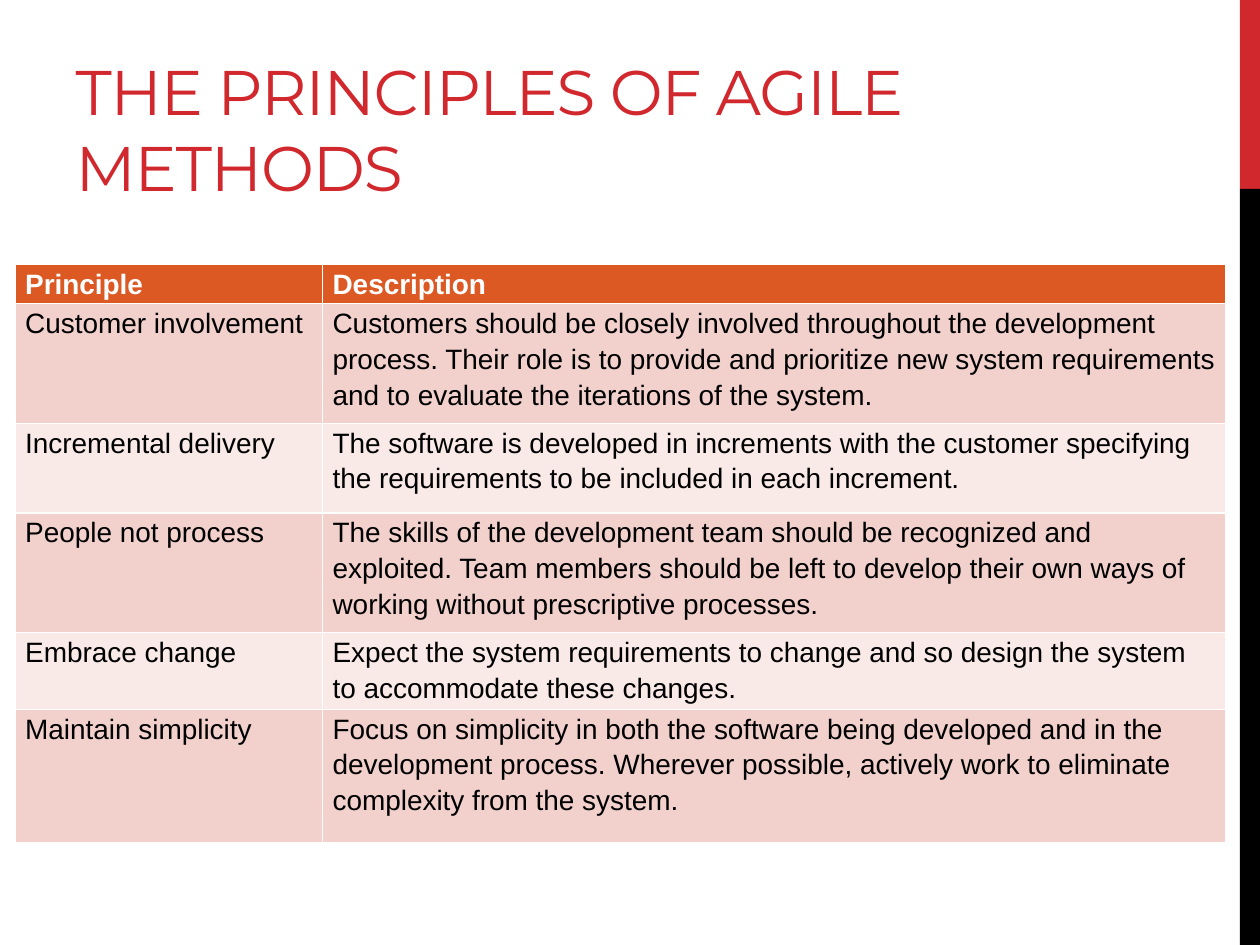
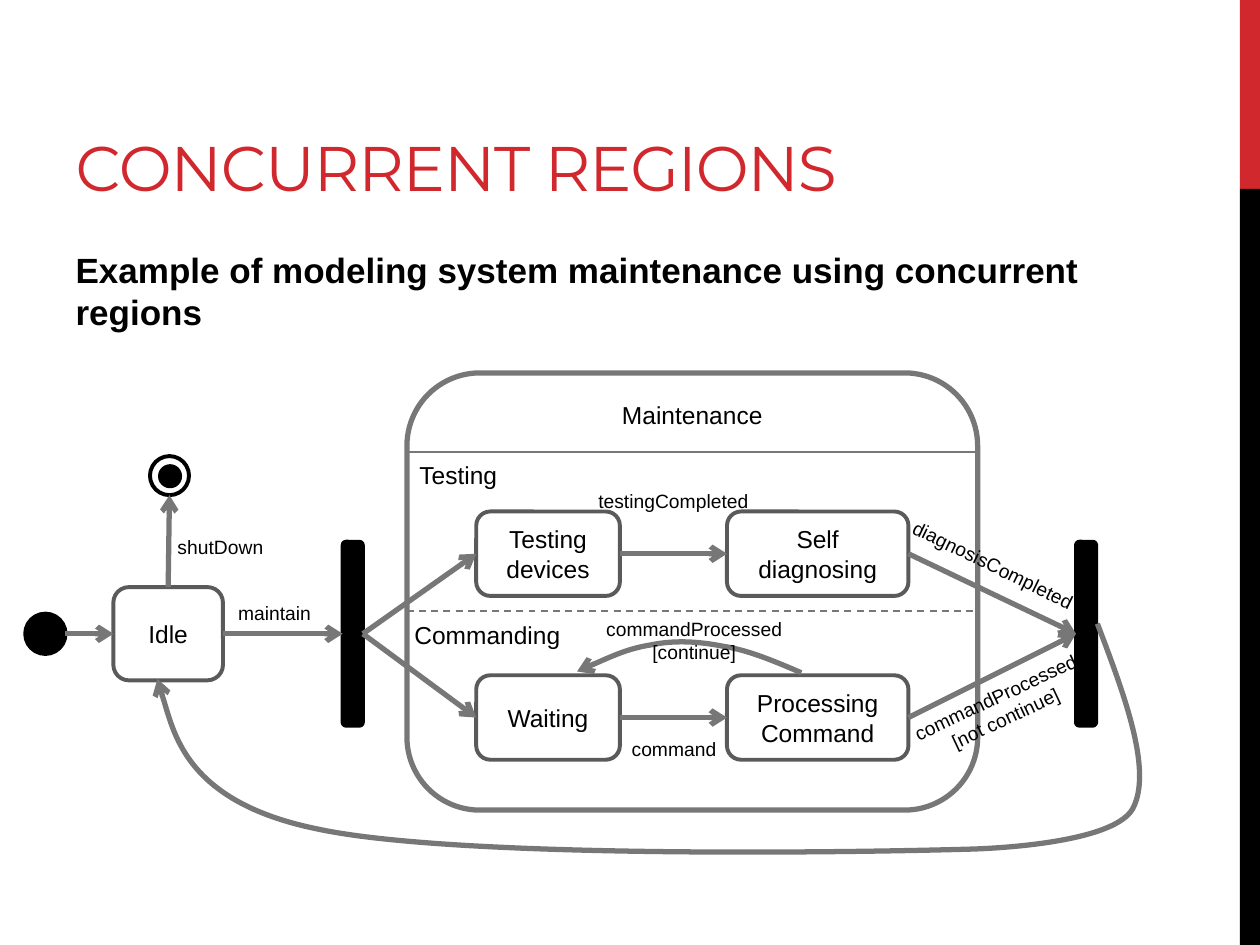
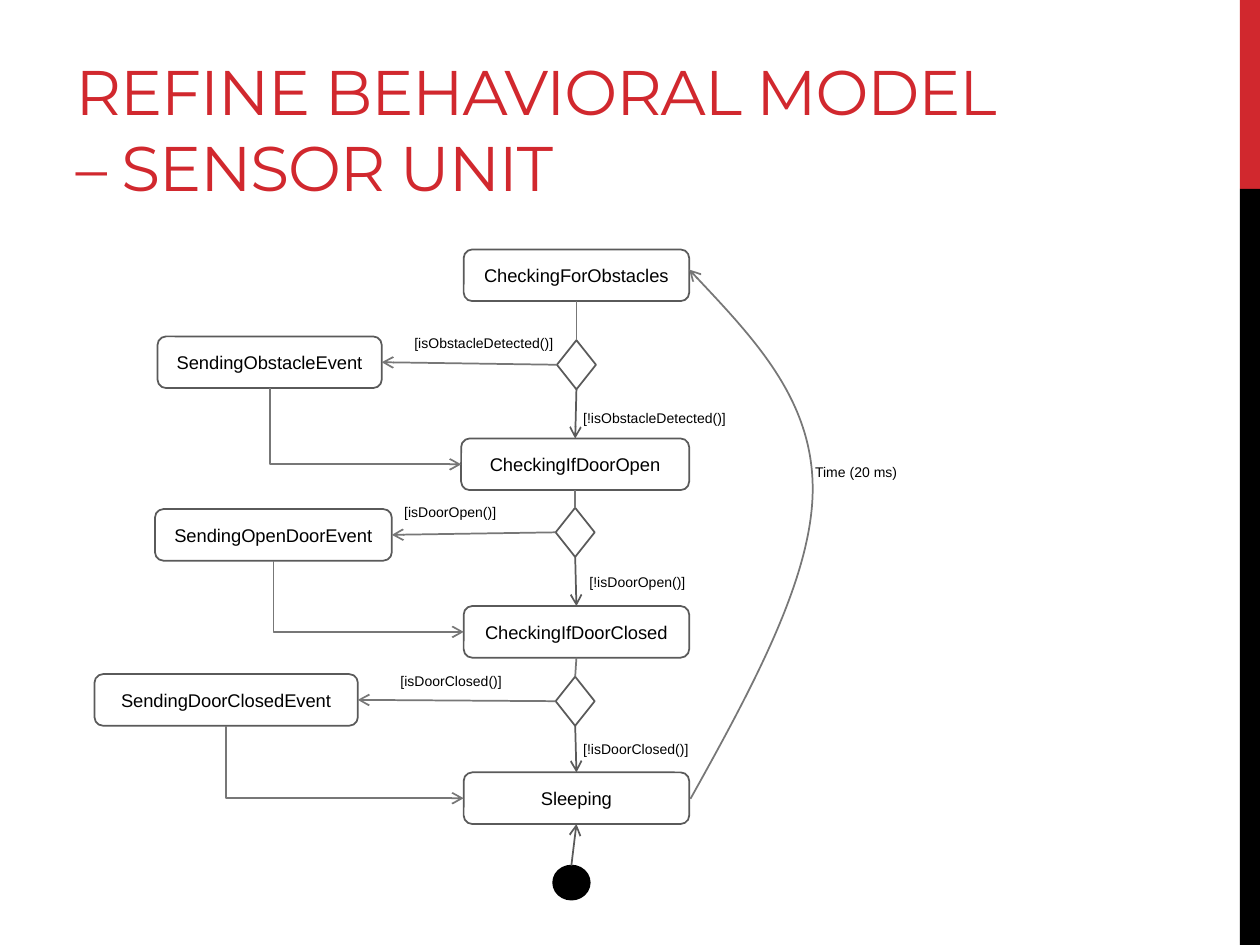
import dataclasses
import enum
import itertools
import typing

import lxml.etree
import pptx
import pptx.dml.color
import pptx.enum.dml
import pptx.enum.shapes
import pptx.enum.text
import pptx.oxml.ns
import pptx.presentation
import pptx.shapes.autoshape
import pptx.shapes.base
import pptx.shapes.connector
import pptx.slide
import pptx.text.text
import pptx.util

Kind = pptx.enum.shapes.MSO_SHAPE
Wire = pptx.enum.shapes.MSO_CONNECTOR
Align = pptx.enum.text.PP_ALIGN
Anchor = pptx.enum.text.MSO_ANCHOR
Fit = pptx.enum.text.MSO_AUTO_SIZE
Node = pptx.shapes.autoshape.Shape
Page = pptx.slide.Slide
qn = pptx.oxml.ns.qn

COLS, ROWS = 100, 75
CELL = pptx.util.Inches(0.1)


@dataclasses.dataclass(frozen=True)
class Theme:
    red: str = "D1282E"
    black: str = "000000"
    white: str = "FFFFFF"
    dark: str = "5A5A5A"
    gray: str = "777777"
    orange: str = "DC5924"
    rose: str = "F2D1CD"
    blush: str = "F9EAE8"
    head: str = "Montserrat"
    text: str = "Arial"
    title: float = 36
    lead: float = 20
    table: float = 16
    state: float = 14
    event: float = 11
    small: float = 10.5
    guard: float = 8


THEME = Theme()


class Side(enum.IntEnum):
    TOP = 0
    LEFT = 1
    FOOT = 2
    RIGHT = 3


class Box(typing.NamedTuple):
    x: float
    y: float
    w: float
    h: float


class Pen(typing.NamedTuple):
    ink: str
    width: float
    tip: bool = False
    dash: bool = False


class Label(typing.NamedTuple):
    text: str
    box: Box
    size: float
    align: Align = Align.CENTER
    turn: float = 0


class Choice(typing.NamedTuple):
    gem: Box
    event: str
    place: Box
    yes: Label
    no: Label


Point = tuple[float, float]

TITLE = Box(5, 1.7, 75.8, 15)
BANDS = [(Box(98.4, 0, 1.6, 15), THEME.red), (Box(98.4, 15, 1.6, 60), THEME.black)]

HEAVY = Pen(THEME.gray, 3, tip=True)
FRAME = Pen(THEME.gray, 3)
BOLD = Pen(THEME.dark, 2.25)
SOLID = Pen(THEME.black, 2.25)
THIN = Pen(THEME.gray, 1)
FINE = Pen(THEME.dark, 1)

TABLE = Box(1.2, 21, 96.1, 45.8)
WIDTHS = [24.4, 71.7]
HEIGHTS = [3.1, 9.5, 7.1, 9.5, 6.1, 10.6]
RULES = [
    ("Principle", "Description"),
    ("Customer involvement", "Customers should be closely involved throughout the development process. Their role is to provide and prioritize new system requirements and to evaluate the iterations of the system."),
    ("Incremental delivery", "The software is developed in increments with the customer specifying the requirements to be included in each increment."),
    ("People not process", "The skills of the development team should be recognized and exploited. Team members should be left to develop their own ways of working without prescriptive processes."),
    ("Embrace change", "Expect the system requirements to change and so design the system to accommodate these changes."),
    ("Maintain simplicity", "Focus on simplicity in both the software being developed and in the development process. Wherever possible, actively work to eliminate complexity from the system."),
]

LABELS = [
    Label("Testing", Box(32.3, 36, 10.2, 3.4), THEME.state, Align.LEFT),
    Label("Commanding", Box(31.9, 48.7, 13.7, 3.4), THEME.state, Align.LEFT),
    Label("command", Box(47.5, 58, 12, 2.9), THEME.event),
    Label("commandProcessed\n[continue]", Box(42.9, 48.5, 24.4, 4.7), THEME.event),
    Label("commandProcessed\n[not continue]", Box(67.2, 53.8, 24.4, 4.7), THEME.event, turn=334.8),
    Label("maintain", Box(16.1, 47.2, 11.4, 2.9), THEME.event),
    Label("diagnosisCompleted", Box(66.6, 43.4, 24.4, 2.9), THEME.event, turn=25.9),
    Label("testingCompleted", Box(45.9, 38.3, 15.1, 2.9), THEME.event),
    Label("shutDown", Box(11.8, 42, 11.4, 2.9), THEME.event),
]
REPEAT = [(63.6, 53.4), (61.5, 52.5), (59.4, 51.6), (57.4, 51.3), (55.4, 50.9),
          (53.5, 50.8), (51.6, 51.2), (49.7, 51.5), (45.8, 53.3), (45.8, 53.3)]
RETURN = [(87.1, 49.5), (89.3, 55.3), (91.5, 61.2), (89.9, 64.2), (88.2, 67.2),
          (76.9, 67.4), (76.9, 67.4), (66.2, 67.7), (35.9, 68.1), (25.2, 65.8),
          (14.4, 63.6), (12.5, 53.9), (12.5, 53.9)]

CHECKS = [
    ("CheckingForObstacles", Box(36.8, 19.8, 17.9, 4.1)),
    ("CheckingIfDoorOpen", Box(36.6, 34.8, 18.1, 4.1)),
    ("CheckingIfDoorClosed", Box(36.8, 48.1, 17.9, 4.1)),
    ("Sleeping", Box(36.8, 61.3, 17.9, 4.1)),
]


def guard(text: str, x: float, y: float, w: float = 13.9) -> Label:
    return Label(text, Box(x, y, w, 2.4), THEME.guard, Align.LEFT)


CHOICES = [
    Choice(Box(44.2, 27, 3.1, 3.9), "SendingObstacleEvent", Box(12.5, 26.7, 17.8, 4.1),
           guard("[isObstacleDetected()]", 31.9, 26.1),
           guard("[!isObstacleDetected()]", 45.3, 32)),
    Choice(Box(44.1, 40.3, 3.1, 3.9), "SendingOpenDoorEvent", Box(12.3, 40.4, 18.8, 4.1),
           guard("[isDoorOpen()]", 31.1, 39.5, 10.6),
           guard("[!isDoorOpen()]", 45.8, 45)),
    Choice(Box(44.1, 53.7, 3.1, 3.9), "SendingDoorClosedEvent", Box(7.5, 53.5, 20.9, 4.1),
           guard("[isDoorClosed()]", 30.8, 52.9, 10.6),
           guard("[!isDoorClosed()]", 45.3, 58.3)),
]
TIMER = [(54.8, 63.4), (59.7, 54.6), (64.5, 45.8), (64.5, 38.8),
         (64.5, 31.8), (59.6, 26.6), (54.7, 21.4)]


def span(cells: float) -> pptx.util.Length:
    return pptx.util.Emu(round(cells * CELL))


def spans(cells: typing.Iterable[float]) -> list[pptx.util.Length]:
    return [span(cell) for cell in cells]


def tint(ink: str) -> pptx.dml.color.RGBColor:
    return pptx.dml.color.RGBColor.from_string(ink)


def move(shape: pptx.shapes.base.BaseShape, box: Box) -> None:
    shape.left, shape.top, shape.width, shape.height = spans(box)


def style(frame: pptx.text.text.TextFrame, size: float, ink: str = THEME.black,
          align: Align = Align.LEFT, face: str = THEME.text, bold: bool = False) -> None:
    for para in frame.paragraphs:
        para.alignment = align
        for run in para.runs:
            run.font.size = pptx.util.Pt(size)
            run.font.name = face
            run.font.bold = bold
            run.font.color.rgb = tint(ink)


def stroke(shape: pptx.shapes.base.BaseShape, pen: Pen) -> None:
    shape.line.color.rgb = tint(pen.ink)
    shape.line.width = pptx.util.Pt(pen.width)
    if pen.dash:
        shape.line.dash_style = pptx.enum.dml.MSO_LINE.DASH
    if pen.tip:
        line = shape.element.find(".//" + qn("a:ln"))
        lxml.etree.SubElement(line, qn("a:tailEnd"), type="arrow")


def draw(page: Page, kind: Kind, box: Box, pen: Pen, fill: str = "", text: str = "",
         size: float = THEME.state, anchor: Anchor = Anchor.MIDDLE) -> Node:
    shape = page.shapes.add_shape(kind, *spans(box))
    shape.shadow.inherit = False
    if fill:
        shape.fill.solid()
        shape.fill.fore_color.rgb = tint(fill)
    else:
        shape.fill.background()
    stroke(shape, pen)
    if text:
        frame = shape.text_frame
        frame.text = text
        frame.word_wrap = True
        frame.vertical_anchor = anchor
        style(frame, size, align=Align.CENTER)
    return shape


def write(page: Page, label: Label) -> None:
    shape = page.shapes.add_textbox(*spans(label.box))
    shape.rotation = label.turn
    frame = shape.text_frame
    frame.text = label.text
    frame.word_wrap = True
    frame.auto_size = Fit.SHAPE_TO_FIT_TEXT
    style(frame, label.size, align=label.align)


def site(shape: Node, side: Side) -> tuple[int, int]:
    across = {Side.LEFT: 0, Side.RIGHT: 1}.get(side, 0.5)
    down = {Side.TOP: 0, Side.FOOT: 1}.get(side, 0.5)
    return (round(shape.left + across * shape.width),
            round(shape.top + down * shape.height))


def line(page: Page, start: tuple[int, int], end: tuple[int, int], pen: Pen,
         kind: Wire = Wire.STRAIGHT) -> pptx.shapes.connector.Connector:
    wire = page.shapes.add_connector(kind, *start, *end)
    stroke(wire, pen)
    lxml.etree.SubElement(wire.element.find(qn("p:spPr")), qn("a:effectLst"))
    return wire


def link(page: Page, source: Node, out: Side, target: Node, into: Side, pen: Pen,
         kind: Wire = Wire.STRAIGHT) -> pptx.shapes.connector.Connector:
    wire = line(page, site(source, out), site(target, into), pen, kind)
    if source.auto_shape_type != Kind.OVAL:
        wire.begin_connect(source, out)
    if target.auto_shape_type != Kind.OVAL:
        wire.end_connect(target, into)
    return wire


def bend(page: Page, source: Node, target: Node, pen: Pen) -> None:
    wire = link(page, source, Side.FOOT, target, Side.LEFT, pen, Wire.ELBOW)
    x, y = site(source, Side.FOOT)
    right, foot = site(target, Side.LEFT)
    wide, high = right - x, foot - y
    wire.left = pptx.util.Emu(x + (wide - high) // 2)
    wire.top = pptx.util.Emu(y + (high - wide) // 2)
    wire.width, wire.height = pptx.util.Emu(high), pptx.util.Emu(wide)
    frame = wire.element.find(".//" + qn("a:xfrm"))
    frame.set("rot", "16200000")
    frame.set("flipH", "1")
    wire.element.find(".//" + qn("a:prstGeom")).set("prst", "bentConnector2")


def curve(page: Page, points: list[Point], pen: Pen) -> None:
    first, *rest = [tuple(spans(point)) for point in points]
    form = page.shapes.build_freeform(*first)
    form.add_line_segments(rest, close=False)
    shape = form.convert_to_shape()
    shape.shadow.inherit = False
    shape.fill.background()
    stroke(shape, pen)
    track = shape.element.find(".//" + qn("a:path"))
    parts = track.findall(qn("a:lnTo"))
    for start in range(0, len(parts), 3):
        arc = lxml.etree.SubElement(track, qn("a:cubicBezTo"))
        for part in parts[start:start + 3]:
            arc.append(part[0])
            track.remove(part)


def begin(deck: pptx.presentation.Presentation, title: str, layout: int = 5) -> Page:
    page = deck.slides.add_slide(deck.slide_layouts[layout])
    shape = page.shapes.title
    move(shape, TITLE)
    frame = shape.text_frame
    frame.text = title
    frame.word_wrap = True
    frame.auto_size = Fit.NONE
    frame.vertical_anchor = Anchor.BOTTOM
    style(frame, THEME.title, THEME.red, face=THEME.head)
    for run in frame.paragraphs[0].runs:
        run.font.element.set("spc", "-60") if hasattr(run.font, "element") else \
            shape.element.find(".//" + qn("a:rPr")).set("spc", "-60")
    return page


def trim(deck: pptx.presentation.Presentation) -> None:
    tree = deck.slide_master.shapes.element
    for index, (box, ink) in enumerate(BANDS, 1):
        band = draw(deck.slides[0], Kind.RECTANGLE, box, THIN, ink)
        band.line.fill.background()
        band.name = f"Band {index}"
        band.element.find(".//" + qn("p:cNvPr")).set("id", str(100 + index))
        tree.append(band.element)


def edge(cell: lxml.etree._Element) -> None:
    for place, side in enumerate("LRTB"):
        rule = lxml.etree.Element(qn(f"a:ln{side}"), w=str(pptx.util.Pt(1)))
        fill = lxml.etree.SubElement(rule, qn("a:solidFill"))
        lxml.etree.SubElement(fill, qn("a:srgbClr"), val=THEME.white)
        cell.insert(place, rule)


def agile(deck: pptx.presentation.Presentation) -> None:
    page = begin(deck, "THE PRINCIPLES OF AGILE METHODS")
    frame = page.shapes.add_table(len(RULES), len(WIDTHS), *spans(TABLE))
    table = frame.table
    for column, width in zip(table.columns, WIDTHS):
        column.width = span(width)
    for index, (row, height, texts) in enumerate(zip(table.rows, HEIGHTS, RULES)):
        row.height = span(height)
        top = index == 0
        fill = THEME.orange if top else (THEME.blush, THEME.rose)[index % 2]
        for cell, text in zip(row.cells, texts):
            cell.margin_left = cell.margin_right = span(0.8)
            cell.margin_top = cell.margin_bottom = 0
            cell.fill.solid()
            cell.fill.fore_color.rgb = tint(fill)
            cell.text_frame.text = text
            cell.text_frame.paragraphs[0].line_spacing = 1.15
            style(cell.text_frame, THEME.table, THEME.white if top else THEME.black, bold=top)
    for cell in frame.element.iter(qn("a:tcPr")):
        edge(cell)


def regions(deck: pptx.presentation.Presentation) -> None:
    page = begin(deck, "CONCURRENT REGIONS", 1)
    body = page.placeholders[1]
    move(body, Box(5, 19.2, 83.3, 8.9))
    frame = body.text_frame
    frame.text = "Example of modeling system maintenance using concurrent regions"
    frame.auto_size = Fit.NONE
    para = frame.paragraphs[0]
    props = body.element.find(".//" + qn("a:p")).get_or_add_pPr()
    props.set("marL", "0")
    props.set("indent", "0")
    lxml.etree.SubElement(props, qn("a:buNone"))
    para.space_before, para.space_after = pptx.util.Pt(0), pptx.util.Pt(6)
    style(frame, THEME.lead, bold=True)

    def state(text: str, x: float, y: float, w: float, h: float = 6.7) -> Node:
        return draw(page, Kind.ROUNDED_RECTANGLE, Box(x, y, w, h), BOLD, text=text)

    whole = Box(32.3, 29.6, 45.3, 34.7)
    idle = state("Idle", 9, 46.6, 8.7, 7.4)
    draw(page, Kind.ROUNDED_RECTANGLE, whole, FRAME, text="Maintenance", anchor=Anchor.TOP)
    test, wait = [state(text, 37.8, y, 11.4)
                  for text, y in (("Testing devices", 40.6), ("Waiting", 53.6))]
    check, work = [state(text, 57.7, y, 14.4)
                   for text, y in (("Self diagnosing", 40.6), ("Processing Command", 53.6))]
    fork, join = [draw(page, Kind.ROUNDED_RECTANGLE, Box(x, 43, 1.6, 14.6), SOLID, THEME.black)
                  for x in (27.2, 85.4)]
    start = draw(page, Kind.OVAL, Box(2, 48.7, 3.2, 3.2), SOLID, THEME.black)
    draw(page, Kind.OVAL, Box(12.7, 37, 1.6, 1.6), SOLID, THEME.black)
    ring = draw(page, Kind.OVAL, Box(11.9, 36.2, 3.1, 3.1), SOLID)

    for source, target in [(start, idle), (idle, fork), (fork, test), (fork, wait),
                           (test, check), (wait, work), (check, join), (work, join)]:
        link(page, source, Side.RIGHT, target, Side.LEFT, HEAVY)
    link(page, idle, Side.TOP, ring, Side.FOOT, HEAVY)
    for y, pen in ((35.9, THIN), (48.5, THIN._replace(dash=True))):
        line(page, spans((whole.x, y)), spans((whole.x + whole.w, y)), pen)
    for points in (REPEAT, RETURN):
        curve(page, points, HEAVY)
    for label in LABELS:
        write(page, label)


def sensor(deck: pptx.presentation.Presentation) -> None:
    page = begin(deck, "REFINE BEHAVIORAL MODEL – SENSOR UNIT")

    def state(text: str, box: Box) -> Node:
        return draw(page, Kind.ROUNDED_RECTANGLE, box, FINE, text=text, size=THEME.small)

    arrow, flow = THIN._replace(tip=True), FINE._replace(tip=True)
    states = [state(text, box) for text, box in CHECKS]
    for choice, (above, below) in zip(CHOICES, itertools.pairwise(states)):
        gem = draw(page, Kind.DIAMOND, choice.gem, FINE)
        event = state(choice.event, choice.place)
        link(page, above, Side.FOOT, gem, Side.TOP, THIN)
        link(page, gem, Side.FOOT, below, Side.TOP, flow)
        link(page, gem, Side.LEFT, event, Side.RIGHT, arrow)
        bend(page, event, below, arrow)
        write(page, choice.yes)
        write(page, choice.no)
    start = draw(page, Kind.OVAL, Box(43.9, 68.7, 2.9, 2.7), FINE._replace(ink=THEME.black),
                 THEME.black)
    link(page, start, Side.TOP, states[-1], Side.FOOT, flow)
    curve(page, TIMER, arrow)
    write(page, guard("Time (20 ms)", 63.7, 36.3, 9.2))


def main() -> None:
    deck = pptx.Presentation()
    deck.slide_width, deck.slide_height = span(COLS), span(ROWS)
    for build in (agile, regions, sensor):
        build(deck)
    trim(deck)
    deck.save("out.pptx")


if __name__ == "__main__":
    main()
